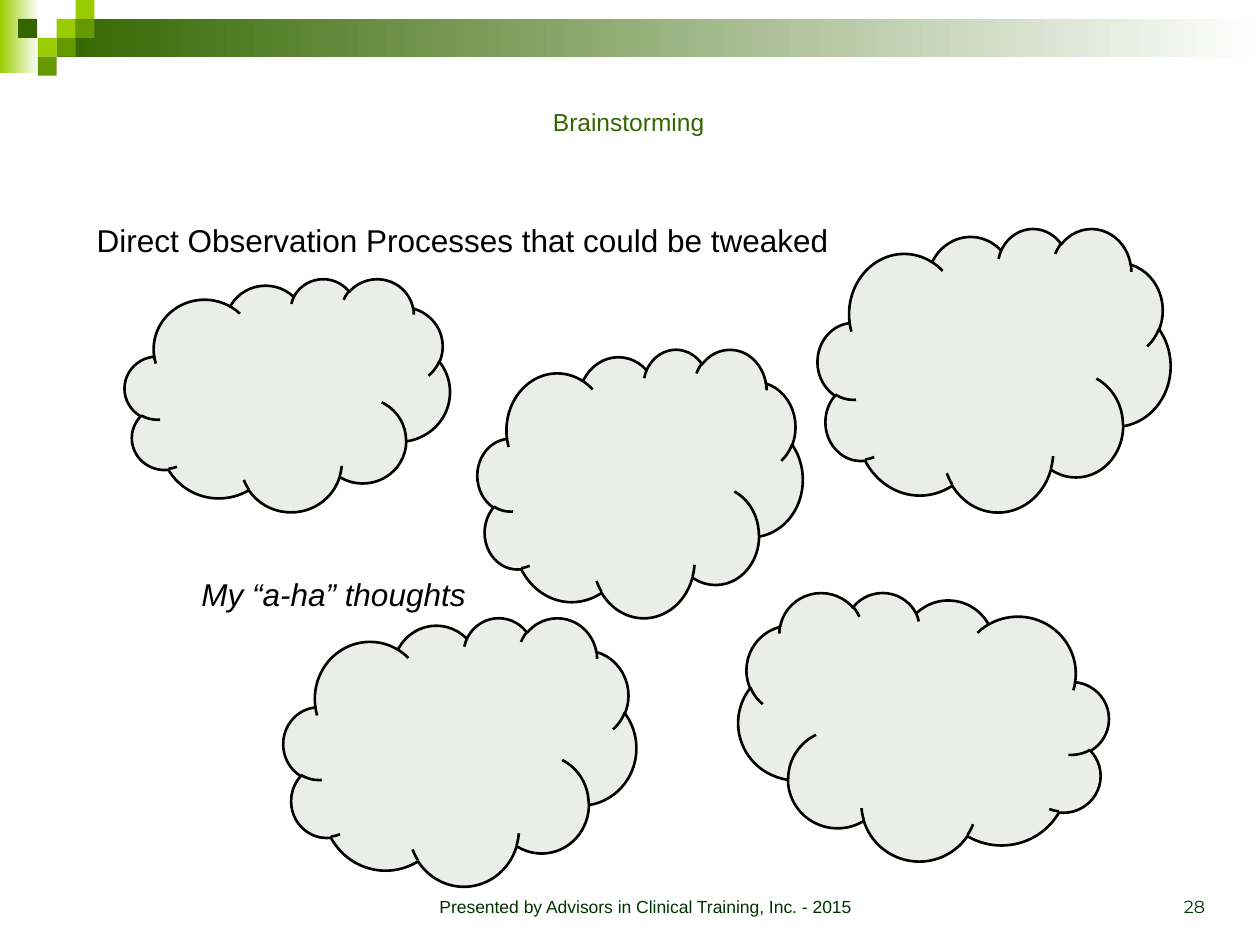
from typing import NamedTuple

from lxml.etree import SubElement
from pptx import Presentation
from pptx.dml.color import RGBColor
from pptx.enum.shapes import MSO_SHAPE as Shape
from pptx.enum.text import MSO_ANCHOR as Anchor, PP_ALIGN as Align
from pptx.oxml.ns import qn
from pptx.util import Pt

LIME, GREEN, FOREST = "99CC00", "669900", "336600"
BLACK, WHITE, FOOTER = "000000", "FFFFFF", "003300"
TILE = 10.8


class Box(NamedTuple):
    x: float
    y: float
    w: float
    h: float


class Tile(NamedTuple):
    x: float
    row: int
    color: str


class Cloud(NamedTuple):
    box: Box
    flipped: bool = False


class Label(NamedTuple):
    text: str
    box: Box
    size: float
    color: str
    align: Align = Align.LEFT
    anchor: Anchor = Anchor.TOP
    font: str = "Arial"
    italic: bool = False


BANDS = [
    (Box(0, 0, 22.3, 41.8), LIME),
    (Box(32.4, TILE, 687.6, 21.6), FOREST),
]
TILES = [
    Tile(32.4, 1, LIME),
    Tile(43.2, 0, LIME),
    Tile(43.2, 1, GREEN),
    Tile(21.6, 2, LIME),
    Tile(10.4, 1, FOREST),
    Tile(32.4, 2, GREEN),
    Tile(21.6, 3, GREEN),
]
CLOUDS = [
    Cloud(Box(162, 352.8, 201.6, 153.4)),
    Cloud(Box(272.9, 199.4, 185.8, 153.4)),
    Cloud(Box(467.3, 130.3, 201.6, 162)),
    Cloud(Box(71.3, 159.1, 185.8, 133.2)),
    Cloud(Box(421.9, 338.4, 211.7, 153.4), flipped=True),
]
LABELS = [
    Label("Direct Observation Processes that could be tweaked",
          Box(48.2, 123, 470, 30), 18, BLACK),
    Label("My “a-ha” thoughts", Box(108, 325, 190, 30), 18, BLACK, italic=True),
    Label("Brainstorming", Box(119.5, 57.6, 479.5, 60.5), 14, FOREST, Align.CENTER),
    Label("Presented by Advisors in Clinical Training, Inc. - 2015",
          Box(221.8, 491.8, 293.8, 36), 10, FOOTER, Align.CENTER, Anchor.BOTTOM),
    Label("28", Box(527.8, 491.8, 167.8, 36), 10, FOOTER, Align.RIGHT,
          Anchor.BOTTOM, "Montserrat"),
]


def rgb(color: str) -> RGBColor:
    return RGBColor.from_string(color)


def add_shape(s, kind: Shape, box: Box):
    sp = s.shapes.add_shape(kind, *map(Pt, box))
    sp.shadow.inherit = False
    return sp


def add_band(s, box: Box, color: str) -> None:
    """Draw a borderless bar that fades to white from left to right."""
    sp = add_shape(s, Shape.RECTANGLE, box)
    sp.line.fill.background()
    sp.fill.gradient()
    sp.fill.gradient_angle = 0
    for stop, stop_color, position in zip(sp.fill.gradient_stops, (color, WHITE), (0, 1)):
        stop.color.rgb = rgb(stop_color)
        stop.position = position


def add_tile(s, tile: Tile) -> None:
    sp = add_shape(s, Shape.RECTANGLE, Box(tile.x, tile.row * TILE, TILE, TILE))
    sp.line.fill.background()
    sp.fill.solid()
    sp.fill.fore_color.rgb = rgb(tile.color)


def add_cloud(s, cloud: Cloud) -> None:
    sp = add_shape(s, Shape.CLOUD, cloud.box)
    sp.fill.solid()
    sp.fill.fore_color.rgb = rgb("1D3A00")
    fill_color = sp._element.spPr.find(qn("a:solidFill"))[0]
    SubElement(fill_color, qn("a:alpha"), val="9000")
    sp.line.color.rgb = rgb(BLACK)
    sp.line.width = Pt(1.5)
    if cloud.flipped:
        sp._element.spPr.find(qn("a:xfrm")).set("flipH", "1")


def add_label(s, label: Label) -> None:
    tf = s.shapes.add_textbox(*map(Pt, label.box)).text_frame
    tf.word_wrap = True
    tf.vertical_anchor = label.anchor
    p = tf.paragraphs[0]
    p.alignment = label.align
    r = p.add_run()
    r.text = label.text
    r.font.name = label.font
    r.font.size = Pt(label.size)
    r.font.italic = label.italic
    r.font.color.rgb = rgb(label.color)


def main() -> None:
    prs = Presentation()
    prs.slide_width, prs.slide_height = Pt(720), Pt(540)
    s = prs.slides.add_slide(prs.slide_layouts[6])
    for box, color in BANDS:
        add_band(s, box, color)
    for tile in TILES:
        add_tile(s, tile)
    for cloud in CLOUDS:
        add_cloud(s, cloud)
    for label in LABELS:
        add_label(s, label)
    prs.save("out.pptx")


if __name__ == "__main__":
    main()
